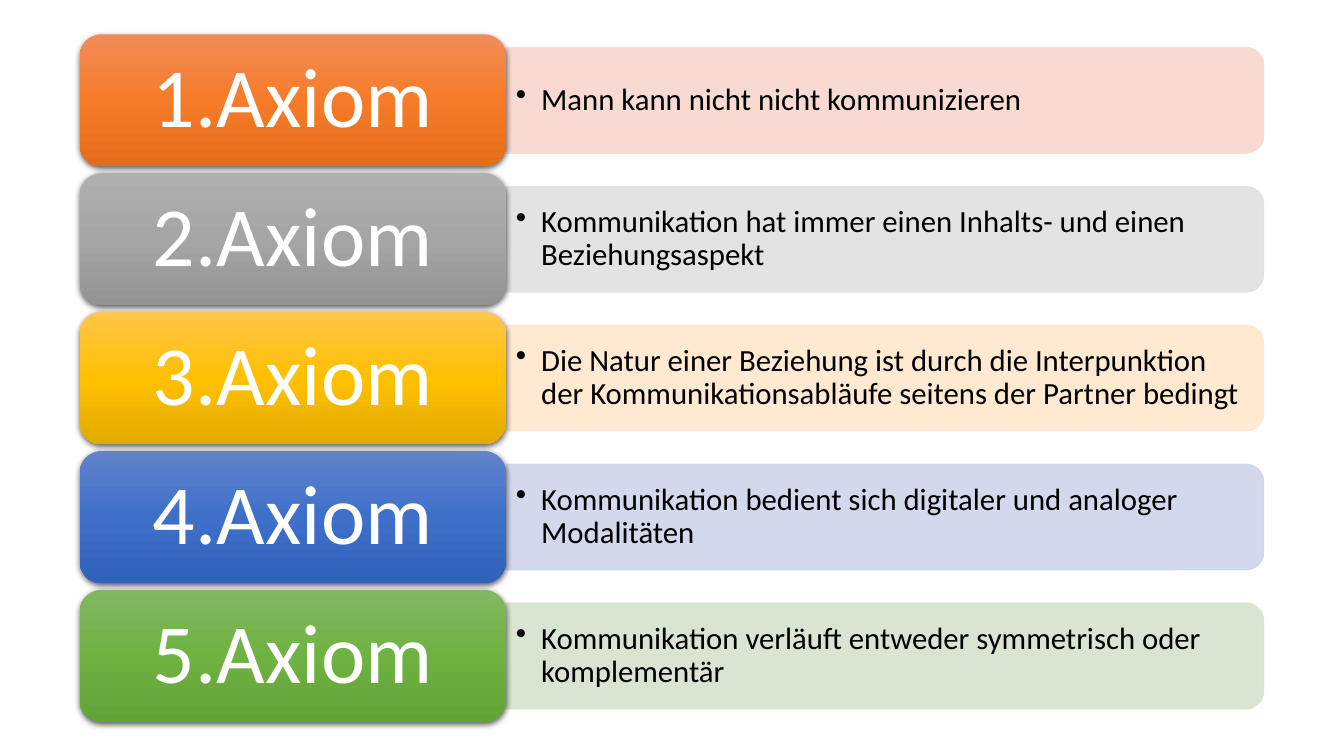
from lxml.etree import SubElement
from pptx import Presentation
from pptx.dml.color import RGBColor
from pptx.enum.shapes import MSO_SHAPE as Preset
from pptx.enum.text import MSO_ANCHOR as Anchor, PP_ALIGN as Align
from pptx.oxml.ns import qn
from pptx.util import Cm, Pt

# Layout in centimetres
FIRST_CENTER, ROW_PITCH = 2.53, 3.5
LABEL_LEFT, LABEL_WIDTH, LABEL_HEIGHT = 2.01, 10.74, 3.33
BAR_LEFT, BAR_LENGTH, BAR_THICKNESS = 12.75, 19.1, 2.67
TEXT_WIDTH, TEXT_HEIGHT = 18.97, 2.41

# Statement, bar colour, label gradient from top to bottom
AXIOMS = [
    ("Mann kann nicht nicht kommunizieren",
     "F8D7CE", ("F18C57", "F67B28", "E56C19")),
    ("Kommunikation hat immer einen Inhalts- und einen Beziehungsaspekt",
     "E1E1E1", ("AFAFAF", "A5A5A5", "939393")),
    ("Die Natur einer Beziehung ist durch die Interpunktion "
     "der Kommunikationsabläufe seitens der Partner bedingt",
     "FFE8CC", ("FFC64B", "FFC000", "E3AB00")),
    ("Kommunikation bedient sich digitaler und analoger Modalitäten",
     "CFD5EA", ("6183CB", "3E70CA", "3062BB")),
    ("Kommunikation verläuft entweder symmetrisch oder komplementär",
     "D5E3CF", ("81B861", "6FB242", "62A336")),
]


def color(hex_value):
    return RGBColor.from_string(hex_value)


def add_node(parent, tag, **attributes):
    return SubElement(parent, qn(tag), {key: str(value) for key, value in attributes.items()})


def set_text(shape, text, size, hex_color, align=Align.LEFT, margins=(0.25, 0.13), bullet=False):
    frame = shape.text_frame
    frame.word_wrap = True
    frame.vertical_anchor = Anchor.MIDDLE
    frame.margin_left = frame.margin_right = Cm(margins[0])
    frame.margin_top = frame.margin_bottom = Cm(margins[1])
    paragraph = frame.paragraphs[0]
    paragraph.alignment = align
    paragraph.line_spacing = 0.9
    run = paragraph.add_run()
    run.text = text
    run.font.name = "Calibri"
    run.font.size = Pt(size)
    run.font.color.rgb = color(hex_color)
    if bullet:
        properties = paragraph._p.get_or_add_pPr()
        properties.set("marL", str(Cm(0.64)))
        properties.set("indent", str(Cm(-0.64)))
        add_node(properties, "a:buChar", char="•")


def add_bar(slide, center, hex_color):
    # The preset rounds its top corners, so a quarter turn rounds the right end
    middle = BAR_LEFT + BAR_LENGTH / 2
    bar = slide.shapes.add_shape(
        Preset.ROUND_2_SAME_RECTANGLE,
        Cm(middle - BAR_THICKNESS / 2), Cm(center - BAR_LENGTH / 2),
        Cm(BAR_THICKNESS), Cm(BAR_LENGTH))
    bar.rotation = 90
    bar.shadow.inherit = False
    bar.line.width = Pt(0.5)
    for fill in (bar.fill, bar.line.fill):
        fill.solid()
        fill.fore_color.rgb = color(hex_color)
    for value in bar._element.spPr.iter(qn("a:srgbClr")):
        add_node(value, "a:alpha", val=90000)


def add_statement(slide, center, text):
    box = slide.shapes.add_textbox(
        Cm(BAR_LEFT), Cm(center - TEXT_HEIGHT / 2), Cm(TEXT_WIDTH), Cm(TEXT_HEIGHT))
    set_text(box, text, 22, "000000", bullet=True)


def add_label(slide, center, text, gradient):
    label = slide.shapes.add_shape(
        Preset.ROUNDED_RECTANGLE, Cm(LABEL_LEFT), Cm(center - LABEL_HEIGHT / 2),
        Cm(LABEL_WIDTH), Cm(LABEL_HEIGHT))
    label.line.fill.background()
    set_text(label, text, 60, "FFFFFF", align=Align.CENTER, margins=(0.8, 0.3))

    # Three-stop gradient
    label.fill.gradient()
    label.fill.gradient_angle = 270
    properties = label._element.spPr
    stops = next(properties.iter(qn("a:gsLst")))
    stops.clear()
    for index, hex_color in enumerate(gradient):
        stop = add_node(stops, "a:gs", pos=index * 50000)
        add_node(stop, "a:srgbClr", val=hex_color)

    # Soft shadow below
    label.shadow.inherit = False
    shadow = add_node(properties.find(qn("a:effectLst")), "a:outerShdw",
                      blurRad=Pt(4.5), dist=Pt(1.5), dir=5400000, algn="ctr", rotWithShape=0)
    add_node(add_node(shadow, "a:srgbClr", val="000000"), "a:alpha", val=63000)


def main():
    presentation = Presentation()
    presentation.slide_width, presentation.slide_height = Cm(33.87), Cm(19.05)
    slide = presentation.slides.add_slide(presentation.slide_layouts.get_by_name("Blank"))

    # One row per axiom
    for index, (statement, bar_color, gradient) in enumerate(AXIOMS):
        center = FIRST_CENTER + index * ROW_PITCH
        add_bar(slide, center, bar_color)
        add_statement(slide, center, statement)
        add_label(slide, center, f"{index + 1}.Axiom", gradient)

    presentation.save("out.pptx")


if __name__ == "__main__":
    main()
